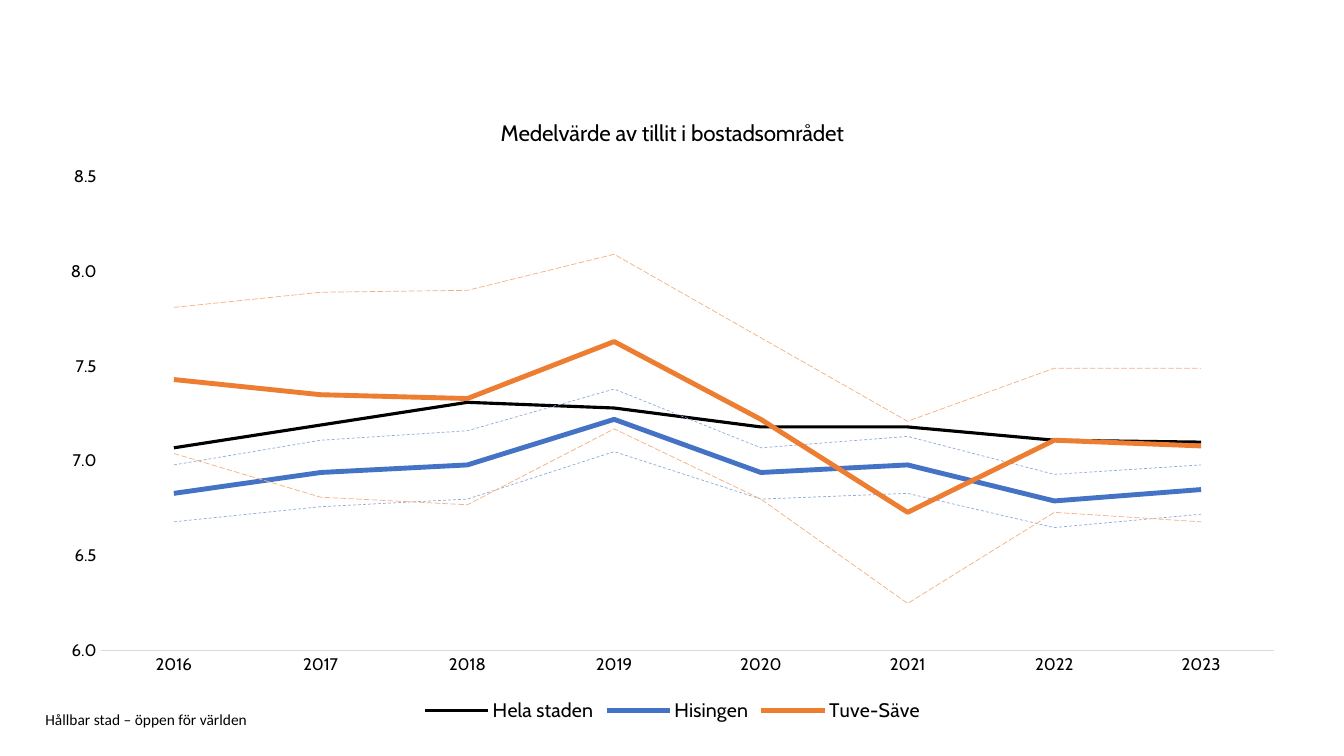
from dataclasses import dataclass

from lxml.etree import SubElement
from pptx import Presentation
from pptx.chart.data import CategoryChartData
from pptx.dml.color import RGBColor
from pptx.enum.chart import XL_CHART_TYPE, XL_LEGEND_POSITION, XL_MARKER_STYLE, XL_TICK_MARK
from pptx.enum.dml import MSO_LINE
from pptx.enum.text import MSO_ANCHOR
from pptx.oxml import parse_xml
from pptx.oxml.ns import nsdecls, qn
from pptx.util import Inches, Pt


@dataclass(frozen=True)
class Theme:
    """Colours, fonts and sizes of the slide."""

    text: str = "000000"
    city: str = "000000"
    hisingen: str = "4472C4"
    hisingen_bound: str = "8FAADC"
    tuve: str = "ED7D31"
    tuve_bound: str = "F4B183"
    axis: str = "D9D9D9"
    chart_font: str = "Cabin"
    footer_font: str = "Calibri"
    title_size: float = 16
    legend_size: float = 14
    axis_size: float = 12
    footer_size: float = 11
    city_width: float = 2.25
    area_width: float = 3.5
    bound_width: float = 0.5
    axis_width: float = 0.75


THEME = Theme()
YEARS = [str(year) for year in range(2016, 2024)]
TRUST = [
    ("Hela staden", [7.07, 7.19, 7.31, 7.28, 7.18, 7.18, 7.11, 7.1],
     THEME.city, THEME.city_width, None),
    ("Hisingen", [6.83, 6.94, 6.98, 7.22, 6.94, 6.98, 6.79, 6.85],
     THEME.hisingen, THEME.area_width, None),
    ("Series 3", [6.68, 6.76, 6.8, 7.05, 6.8, 6.83, 6.65, 6.72],
     THEME.hisingen_bound, THEME.bound_width, MSO_LINE.DASH),
    ("Series 4", [6.98, 7.11, 7.16, 7.38, 7.07, 7.13, 6.93, 6.98],
     THEME.hisingen_bound, THEME.bound_width, MSO_LINE.DASH),
    ("Tuve-Säve", [7.43, 7.35, 7.33, 7.63, 7.22, 6.73, 7.11, 7.08],
     THEME.tuve, THEME.area_width, None),
    ("Series 6", [7.04, 6.81, 6.77, 7.17, 6.8, 6.25, 6.73, 6.68],
     THEME.tuve_bound, THEME.bound_width, MSO_LINE.LONG_DASH),
    ("Series 7", [7.81, 7.89, 7.9, 8.09, 7.65, 7.21, 7.49, 7.49],
     THEME.tuve_bound, THEME.bound_width, MSO_LINE.LONG_DASH),
]


def style_font(font, name, size):
    """Apply a typeface, a size and the text colour."""
    font.name = name
    font.size = Pt(size)
    font.bold = False
    font.color.rgb = RGBColor.from_string(THEME.text)


def style_line(line, color, width, dash=None):
    """Apply a colour, a width and an optional dash to a line."""
    line.color.rgb = RGBColor.from_string(color)
    line.width = Pt(width)
    if dash is not None:
        line.dash_style = dash


def style_axes(chart):
    """Set the scale, labels and lines of both axes."""
    years, scores = chart.category_axis, chart.value_axis
    for axis in (years, scores):
        axis.major_tick_mark = XL_TICK_MARK.NONE
        axis.minor_tick_mark = XL_TICK_MARK.NONE
        axis.has_major_gridlines = False
    style_line(years.format.line, THEME.axis, THEME.axis_width)
    scores.format.line.fill.background()
    scores.minimum_scale, scores.maximum_scale, scores.major_unit = 6, 8.5, 0.5
    scores.tick_labels.number_format = "0.0"
    scores.tick_labels.number_format_is_linked = False


def add_legend(chart):
    """Add a bottom legend without the dashed bounds."""
    chart.has_legend = True
    chart.legend.position = XL_LEGEND_POSITION.BOTTOM
    chart.legend.include_in_layout = False
    style_font(chart.legend.font, THEME.chart_font, THEME.legend_size)
    position = chart.element.find(".//" + qn("c:legendPos"))
    bounds = [index for index, (*_, dash) in enumerate(TRUST) if dash is not None]
    for index in reversed(bounds):
        position.addnext(parse_xml(
            f'<c:legendEntry {nsdecls("c")}><c:idx val="{index}"/>'
            '<c:delete val="1"/></c:legendEntry>'))


def place_plot(chart, **fractions):
    """Fix the inner plot area as fractions of the chart."""
    plot_area = chart.element.find(".//" + qn("c:plotArea"))
    for automatic in plot_area.findall(qn("c:layout")):
        plot_area.remove(automatic)
    layout = parse_xml(f'<c:layout {nsdecls("c")}><c:manualLayout/></c:layout>')
    settings = {"layoutTarget": "inner", "xMode": "edge", "yMode": "edge", **fractions}
    for tag, value in settings.items():
        SubElement(layout[0], qn(f"c:{tag}"), val=str(value))
    plot_area.insert(0, layout)


def add_trust_chart(slide):
    """Draw mean trust per year with its dashed bounds."""
    trust = CategoryChartData(number_format="0.00")
    trust.categories = YEARS
    for name, means, *_ in TRUST:
        trust.add_series(name, means)
    chart = slide.shapes.add_chart(
        XL_CHART_TYPE.LINE, Inches(0.45), Inches(0.95), Inches(12.44), Inches(6.26), trust
    ).chart
    style_font(chart.font, THEME.chart_font, THEME.axis_size)
    chart.has_title = True
    heading = chart.chart_title.text_frame
    heading.text = "Medelvärde av tillit i bostadsområdet"
    style_font(heading.paragraphs[0].font, THEME.chart_font, THEME.title_size)
    chart.plots[0].vary_by_categories = False
    for series, (_, _, color, width, dash) in zip(chart.plots[0].series, TRUST):
        series.smooth = False
        series.marker.style = XL_MARKER_STYLE.NONE
        style_line(series.format.line, color, width, dash)
    style_axes(chart)
    add_legend(chart)
    place_plot(chart, x=0.044, y=0.128, w=0.936, h=0.752)


def add_footer(slide, wording):
    """Write the motto at the foot of the slide."""
    footer = slide.shapes.add_textbox(
        Inches(0.45), Inches(7.06), Inches(9.45), Inches(0.16)).text_frame
    footer.word_wrap = True
    footer.vertical_anchor = MSO_ANCHOR.MIDDLE
    footer.margin_left = footer.margin_right = footer.margin_top = footer.margin_bottom = 0
    footer.text = wording
    style_font(footer.paragraphs[0].font, THEME.footer_font, THEME.footer_size)


def main():
    """Build and save the slide."""
    deck = Presentation()
    deck.slide_width, deck.slide_height = Inches(13.33), Inches(7.5)
    slide = deck.slides.add_slide(deck.slide_layouts.get_by_name("Blank"))
    add_footer(slide, "Hållbar stad – öppen för världen")
    add_trust_chart(slide)
    deck.save("out.pptx")


if __name__ == "__main__":
    main()
